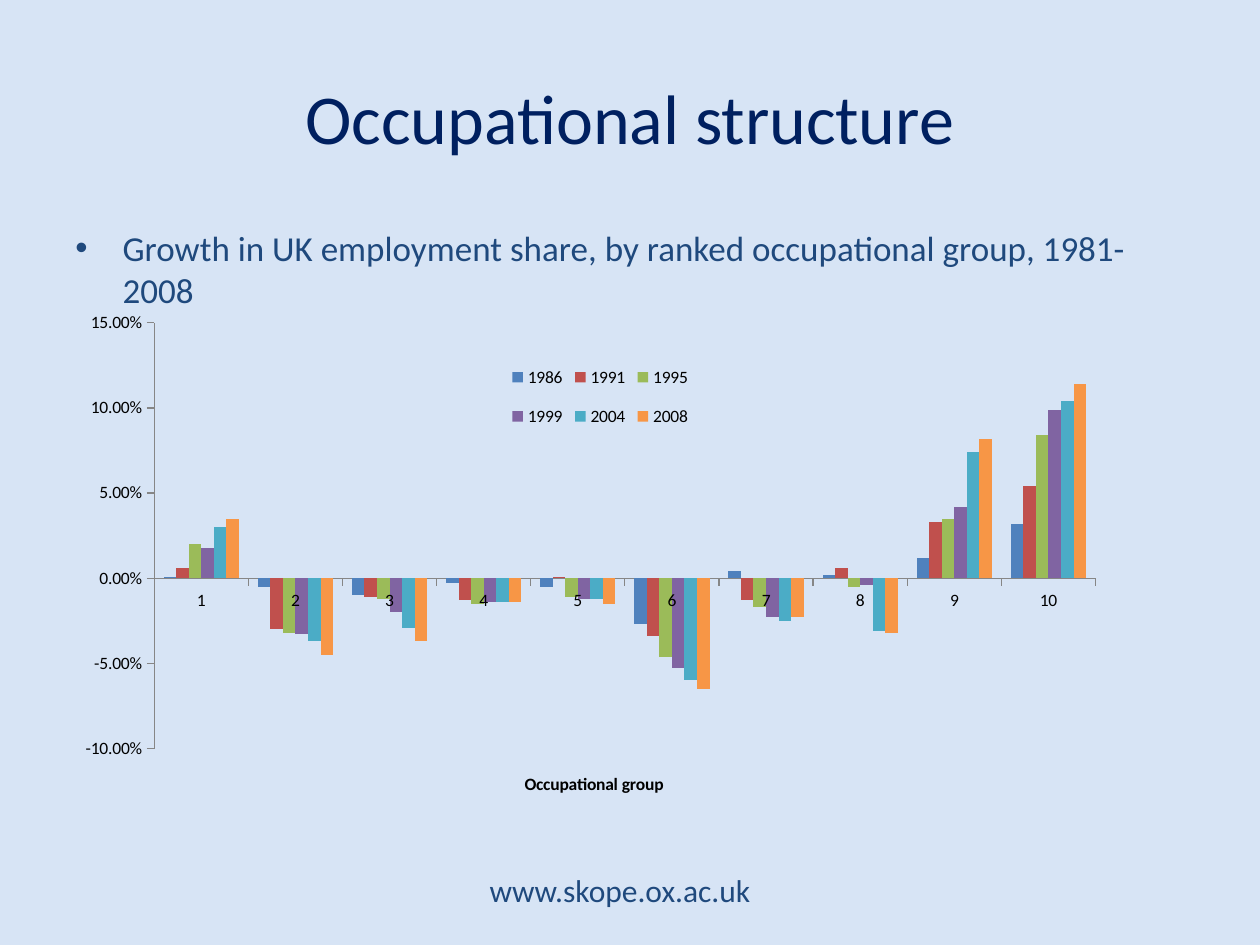
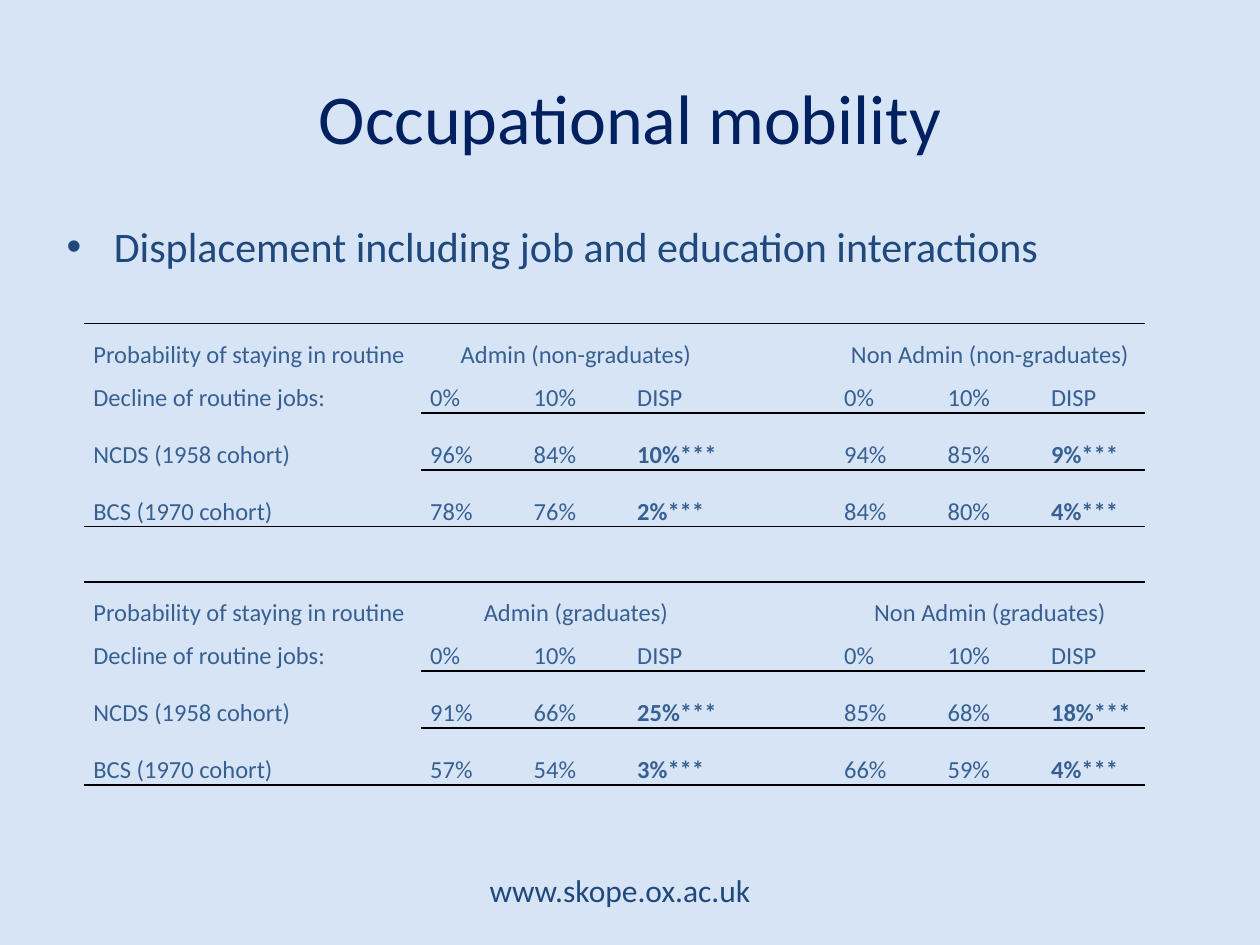
from lxml import etree
from pptx import Presentation
from pptx.chart.data import CategoryChartData as ChartData
from pptx.dml.color import RGBColor as Rgb
from pptx.enum.chart import XL_CHART_TYPE as Kind, XL_LEGEND_POSITION as Side, XL_TICK_MARK as Tick
from pptx.enum.text import MSO_ANCHOR as Anchor, PP_ALIGN as Align
from pptx.oxml import parse_xml as parse
from pptx.oxml.ns import qn
from pptx.util import Pt

BACK, NAVY, BLUE, STEEL = "D7E4F5", "002060", "1F497D", "376092"
BLACK, GRAY = "000000", "868686"
FONT = "Calibri"
PLAIN = "{2D5ABB26-0587-4C30-8999-92F81FD0307C}"
GROWTH = {
    "1986": ("4F81BD", [0.001, -0.005, -0.01, -0.003, -0.005, -0.027, 0.004, 0.002, 0.012, 0.032]),
    "1991": ("C0504D", [0.006, -0.03, -0.011, -0.013, 0.001, -0.034, -0.013, 0.006, 0.033, 0.054]),
    "1995": ("9BBB59", [0.02, -0.032, -0.012, -0.015, -0.011, -0.046, -0.017, -0.005, 0.035, 0.084]),
    "1999": ("8064A2", [0.018, -0.033, -0.02, -0.014, -0.012, -0.053, -0.023, -0.004, 0.042, 0.099]),
    "2004": ("4BACC6", [0.03, -0.037, -0.029, -0.014, -0.012, -0.06, -0.025, -0.031, 0.074, 0.104]),
    "2008": ("F79646", [0.035, -0.045, -0.037, -0.014, -0.015, -0.065, -0.023, -0.032, 0.082, 0.114]),
}
TABLES = [
    (185, "graduates", ["96%", "84%", "10%***", "", "94%", "85%", "9%***"],
     ["78%", "76%", "2%***", "", "84%", "80%", "4%***"]),
    (332.5, "graduates", ["91%", "66%", "25%***", "", "85%", "68%", "18%***"],
     ["57%", "54%", "3%***", "", "66%", "59%", "4%***"]),
]


def color(code):
    return Rgb.from_string(code)


def place(node, index, **spots):
    for old in node.findall(qn("c:layout")):
        node.remove(old)
    layout = etree.Element(qn("c:layout"))
    manual = etree.SubElement(layout, qn("c:manualLayout"))
    for tag, val in spots.items():
        etree.SubElement(manual, qn("c:" + tag)).set("val", str(val))
    node.insert(index, layout)


def rule(cell, side):
    line = parse(
        f'<a:{side} xmlns:a="http://schemas.openxmlformats.org/drawingml/2006/main" w="{Pt(1)}">'
        f'<a:solidFill><a:srgbClr val="{BLACK}"/></a:solidFill></a:{side}>')
    cell._tc.get_or_add_tcPr().insert(0, line)


class Deck:
    def __init__(self):
        self.prs = Presentation()
        self.prs.slide_width, self.prs.slide_height = Pt(720), Pt(540)

    def style(self, font, size, tint, bold=False):
        font.name, font.size, font.bold = FONT, Pt(size), bold
        font.color.rgb = color(tint)

    def page(self, title):
        self.slide = self.prs.slides.add_slide(self.prs.slide_layouts[6])
        fill = self.slide.background.fill
        fill.solid()
        fill.fore_color.rgb = color(BACK)
        self.text("www.skope.ox.ac.uk", (230.5, 494, 247.5, 29), 18, BLUE)
        self.text(title, (36, 21.5, 648, 90), 40, NAVY)

    def text(self, words, box, size, tint, bullet=False):
        frame = self.slide.shapes.add_textbox(*map(Pt, box)).text_frame
        frame.word_wrap = True
        frame.vertical_anchor = Anchor.TOP if bullet else Anchor.MIDDLE
        para = frame.paragraphs[0]
        para.text = words
        if bullet:
            props = para._p.get_or_add_pPr()
            props.set("marL", str(Pt(27)))
            props.set("indent", str(-Pt(27)))
            etree.SubElement(props, qn("a:buFont")).set("typeface", "Arial")
            etree.SubElement(props, qn("a:buChar")).set("char", "•")
        else:
            para.alignment = Align.CENTER
        self.style(para.font, size, tint)

    def chart(self, series, box):
        data = ChartData(number_format="0.00%")
        data.categories = [str(n) for n in range(1, 11)]
        for name, (_, vals) in series.items():
            data.add_series(name, vals)
        chart = self.slide.shapes.add_chart(Kind.COLUMN_CLUSTERED, *map(Pt, box), data).chart
        self.style(chart.font, 10, BLACK)
        chart.has_title = False
        plot = chart.plots[0]
        plot.gap_width, plot.overlap, plot.vary_by_categories = 150, 0, False
        for bar, (tint, _) in zip(plot.series, series.values()):
            bar.invert_if_negative = False
            bar.format.fill.solid()
            bar.format.fill.fore_color.rgb = color(tint)
        for axis in (chart.category_axis, chart.value_axis):
            axis.has_major_gridlines = False
            axis.major_tick_mark, axis.minor_tick_mark = Tick.OUTSIDE, Tick.NONE
            axis.format.line.color.rgb = color(GRAY)
            axis.format.line.width = Pt(0.75)
        axis.minimum_scale, axis.maximum_scale, axis.major_unit = -0.1, 0.15, 0.05
        axis.tick_labels.number_format = "0.00%"
        axis.tick_labels.number_format_is_linked = False
        title = chart.category_axis.axis_title
        para = title.text_frame.paragraphs[0]
        para.text = "Occupational group"
        self.style(para.font, 10, BLACK, True)
        chart.has_legend = True
        legend = chart.legend
        legend.position, legend.include_in_layout = Side.RIGHT, False
        self.style(legend.font, 10, BLACK)
        edge = dict(xMode="edge", yMode="edge")
        area = chart._chartSpace.find(".//" + qn("c:plotArea"))
        place(area, 0, layoutTarget="inner", **edge, x=0.076, y=0.039, w=0.895, h=0.868)
        place(legend._element, 1, **edge, x=0.41, y=0.09, w=0.18, h=0.2)
        place(title._element, 1, **edge, x=0.425, y=0.95)

    def table(self, top, rows):
        high = [26.5, 24.5, 32.5, 32.5]
        wide = [192.5] + [59.15] * 7
        shape = self.slide.shapes.add_table(
            4, 8, Pt(48), Pt(top), Pt(sum(wide)), Pt(sum(high)))
        table = shape.table
        table.first_row = table.horz_banding = False
        table._tbl.tblPr.find(qn("a:tableStyleId")).text = PLAIN
        for row, size in zip(table.rows, high):
            row.height = Pt(size)
        for col, size in zip(table.columns, wide):
            col.width = Pt(size)
        for r, row in enumerate(rows):
            for c, words in enumerate(row):
                self.cell(table.cell(r, c), words, r, c)
        for c in (1, 5):
            table.cell(0, c).merge(table.cell(0, c + 2))

    def cell(self, cell, words, r, c):
        cell.fill.background()
        cell.vertical_anchor = Anchor.BOTTOM
        cell.margin_left = cell.margin_right = Pt(5.4)
        cell.margin_top = cell.margin_bottom = 0
        para = cell.text_frame.paragraphs[0]
        para.text = words
        para.line_spacing = 1.15
        para.alignment = Align.CENTER if r == 0 and c else Align.LEFT
        self.style(para.font, 14, STEEL, r > 1 and c in (3, 7))
        if r == 0 or r == 2 and c:
            rule(cell, "lnT")
        if r == 3:
            rule(cell, "lnB")


def main():
    deck = Deck()
    deck.page("Occupational structure")
    deck.text("Growth in UK employment share, by ranked occupational group, 1981-2008",
              (36, 126, 648, 356.5), 20, BLUE, True)
    deck.chart(GROWTH, (42.5, 173.5, 601, 283.5))

    deck.page("Occupational mobility")
    deck.text("Displacement including job and education interactions",
              (31, 122.5, 648, 356.5), 24, BLUE, True)
    heads = ["0%", "10%", "DISP"]
    for (top, _, ncds, bcs), group in zip(TABLES, ("non-graduates", "graduates")):
        deck.table(top, [
            ["Probability of staying in routine", f"Admin ({group})", "", "", "",
             f"Non Admin ({group})", "", ""],
            ["Decline of routine jobs:", *heads, "", *heads],
            ["NCDS (1958 cohort)", *ncds],
            ["BCS (1970 cohort)", *bcs],
        ])
    deck.prs.save("out.pptx")


if __name__ == "__main__":
    main()
